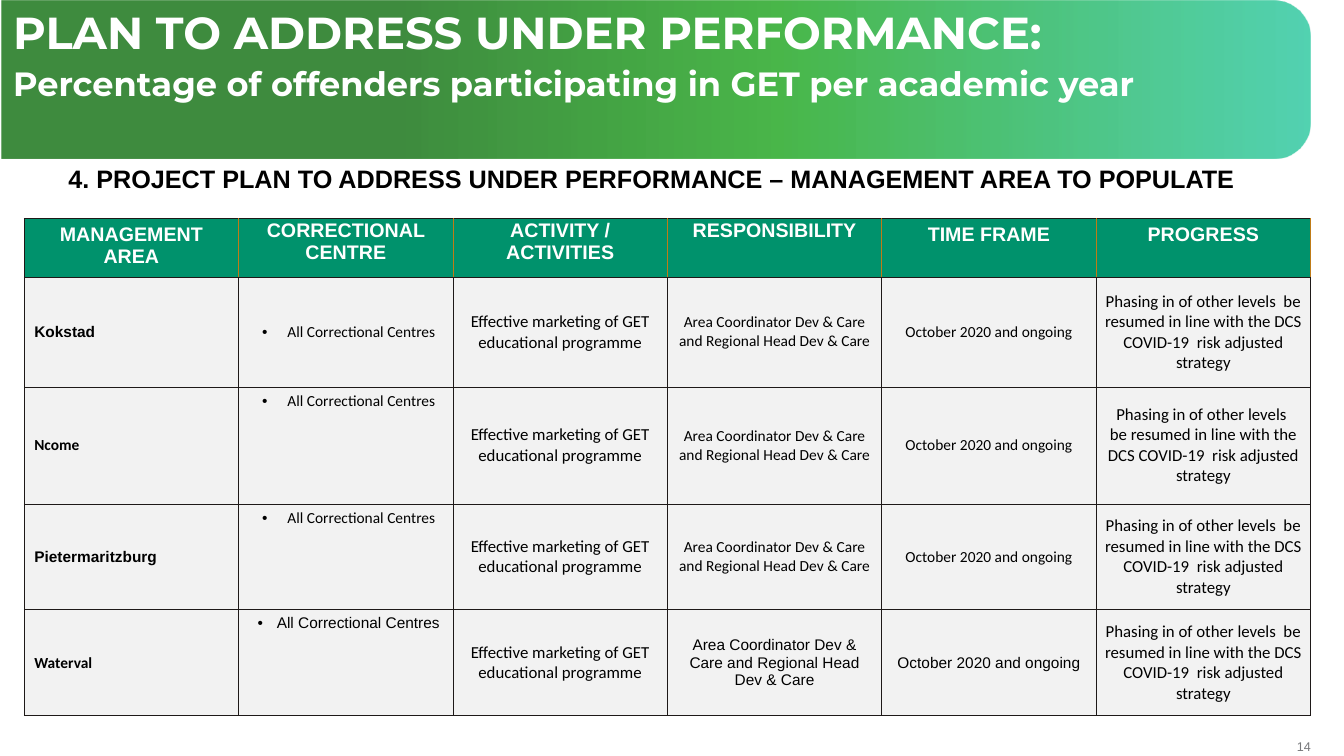
import pptx
import pptx.util
import pptx.oxml
import pptx.dml.color
import pptx.enum.shapes
import pptx.enum.text

Inches = pptx.util.Inches
ALIGN = pptx.enum.text.PP_ALIGN
ANCHOR = pptx.enum.text.MSO_ANCHOR
NAMESPACE = 'xmlns:a="http://schemas.openxmlformats.org/drawingml/2006/main"'

THEME = {
    "white": "FFFFFF", "black": "000000", "number": "77787B",
    "header": "00926C", "cell": "F2F2F2", "border": "1E1918", "divider": "BF7B17",
    "banner": [(30, "006600", 75), (59, "009900", 71), (100, "00BC8D", 67)],
    "title": {"name": "Montserrat", "size": pptx.util.Pt(32), "bold": True},
    "subtitle": {"name": "Montserrat", "size": pptx.util.Pt(24), "bold": True},
    "heading": {"name": "Arial", "size": pptx.util.Pt(18), "bold": True},
    "column": {"name": "Arial", "size": pptx.util.Pt(14), "bold": True},
    "small": {"size": pptx.util.Pt(11), "bold": False},
    "medium": {"name": "Calibri", "size": pptx.util.Pt(12), "bold": False},
    "page": {"name": "Arial", "size": pptx.util.Pt(9), "bold": False},
}


def write(paragraph, text, style, color, alignment=ALIGN.LEFT):
    paragraph.alignment = alignment
    run = paragraph.add_run()
    run.text = text
    for name, value in style.items():
        setattr(run.font, name, value)
    run.font.color.rgb = pptx.dml.color.RGBColor.from_string(THEME[color])


def format_cell(cell, fill, anchor, margins, side_colors):
    cell.fill.solid()
    cell.fill.fore_color.rgb = pptx.dml.color.RGBColor.from_string(THEME[fill])
    cell.vertical_anchor = anchor
    for side, margin in zip(("left", "top", "right", "bottom"), margins):
        setattr(cell, f"margin_{side}", Inches(margin))
    properties = cell._tc.get_or_add_tcPr()
    for index, (side, color) in enumerate(zip("LRTB", side_colors)):
        properties.insert(index, pptx.oxml.parse_xml(
            f'<a:ln{side} {NAMESPACE} w="6350"><a:solidFill>'
            f'<a:srgbClr val="{THEME[color]}"/></a:solidFill></a:ln{side}>'))


presentation = pptx.Presentation()
presentation.slide_width = Inches(13.33)
presentation.slide_height = Inches(7.5)
slide = presentation.slides.add_slide(presentation.slide_layouts[5])

banner = slide.shapes.add_shape(
    pptx.enum.shapes.MSO_SHAPE.ROUND_2_SAME_RECTANGLE,
    Inches(5.72), Inches(-5.7), Inches(1.57), Inches(12.98))
banner.rotation = 90
banner.adjustments[0] = 0.233
banner.adjustments[1] = 0
banner.shadow.inherit = False
banner.line.fill.background()
stops = "".join(
    f'<a:gs pos="{position * 1000}"><a:srgbClr val="{color}">'
    f'<a:alpha val="{opacity * 1000}"/></a:srgbClr></a:gs>'
    for position, color, opacity in THEME["banner"])
banner.fill.gradient()
gradient = banner._element.spPr.find(pptx.oxml.ns.qn("a:gradFill"))
gradient.getparent().replace(gradient, pptx.oxml.parse_xml(
    f'<a:gradFill {NAMESPACE} rotWithShape="1"><a:gsLst>{stops}</a:gsLst>'
    '<a:lin ang="16200000" scaled="0"/></a:gradFill>'))

title = slide.shapes.title
title.left, title.top, title.width, title.height = map(Inches, (0.03, 0.06, 11.98, 0.57))
title_frame = title.text_frame
title_frame.word_wrap = True
title_frame.auto_size = pptx.enum.text.MSO_AUTO_SIZE.NONE
title_frame.vertical_anchor = ANCHOR.TOP
write(title_frame.paragraphs[0], "PLAN TO ADDRESS UNDER PERFORMANCE:", THEME["title"], "white")
write(title_frame.add_paragraph(), "Percentage of offenders participating in GET per academic year",
      THEME["subtitle"], "white")
for paragraph in title_frame.paragraphs:
    paragraph.line_spacing = 0.9
    paragraph.space_before = pptx.util.Pt(0)
    paragraph.space_after = pptx.util.Pt(6)
slide.shapes._spTree.remove(title._element)
slide.shapes._spTree.append(title._element)

heading = slide.shapes.add_textbox(Inches(0.58), Inches(1.57), Inches(12.17), Inches(0.4))
heading.text_frame.word_wrap = True
write(heading.text_frame.paragraphs[0],
      "4. PROJECT PLAN TO ADDRESS UNDER PERFORMANCE – MANAGEMENT AREA TO POPULATE",
      THEME["heading"], "black")

columns = ["MANAGEMENT AREA", "CORRECTIONAL CENTRE", "ACTIVITY / ACTIVITIES",
           "RESPONSIBILITY", "TIME FRAME", "PROGRESS"]
areas = [("Kokstad", "Arial", "Calibri"), ("Ncome", "Calibri", "Calibri"),
         ("Pietermaritzburg", "Arial", "Calibri"), ("Waterval", "Calibri", "Arial")]
plan = ["All Correctional Centres", "Effective marketing of GET educational programme",
        "Area Coordinator Dev & Care and Regional Head Dev & Care", "October 2020 and ongoing",
        "Phasing in of other levels  be resumed in line with the DCS COVID-19  risk adjusted strategy"]
normal, tight, none = (0.1, 0.05, 0.1, 0.05), (0.01, 0.01, 0.01, 0), (0, 0, 0, 0)

table = slide.shapes.add_table(5, 6, Inches(0.24), Inches(2.17), Inches(12.76), Inches(4.93)).table
table.first_row = table.horz_banding = False
for column in table.columns:
    column.width = Inches(12.76 / 6)
for row, height in zip(table.rows, (0.58, 1.09, 1.16, 1.05, 1.05)):
    row.height = Inches(height)

for index, label in enumerate(columns):
    cell = table.cell(0, index)
    write(cell.text_frame.paragraphs[0], label, THEME["column"], "white", ALIGN.CENTER)
    format_cell(cell, "header", ANCHOR.TOP, tight if index in (1, 2, 3) else normal,
                ("divider" if index else "border", "divider", "border", "border"))

for row_index, (area, area_font, text_font) in enumerate(areas, 1):
    for index, text in enumerate([area] + plan):
        cell = table.cell(row_index, index)
        paragraph = cell.text_frame.paragraphs[0]
        wide = index in (2, 5)
        style = THEME["medium"] if wide else {**THEME["small"], "name": text_font}
        if index == 0:
            style = {**style, "name": area_font, "bold": True}
        write(paragraph, text, style, "black", ALIGN.CENTER if index else ALIGN.LEFT)
        if index == 1:
            indent = 0.19 if text_font == "Arial" else 0.25
            properties = paragraph._p.get_or_add_pPr()
            properties.set("marL", str(Inches(indent + 0.06)))
            properties.set("indent", str(-Inches(indent)))
            for bullet in ('buFont {} typeface="Arial"', 'buChar {} char="•"'):
                properties.append(pptx.oxml.parse_xml(f"<a:{bullet.format(NAMESPACE)}/>"))
        format_cell(cell, "cell", ANCHOR.TOP if index == 1 and row_index > 1 else ANCHOR.MIDDLE,
                    none if wide and area != "Ncome" else normal, ["border"] * 4)

page = slide.shapes.add_textbox(Inches(12.61), Inches(7.33), Inches(0.39), Inches(0.15))
for side in ("left", "top", "right", "bottom"):
    setattr(page.text_frame, f"margin_{side}", 0)
page.text_frame.word_wrap = True
page.text_frame.vertical_anchor = ANCHOR.MIDDLE
write(page.text_frame.paragraphs[0], "14", THEME["page"], "number", ALIGN.RIGHT)

presentation.save("out.pptx")
